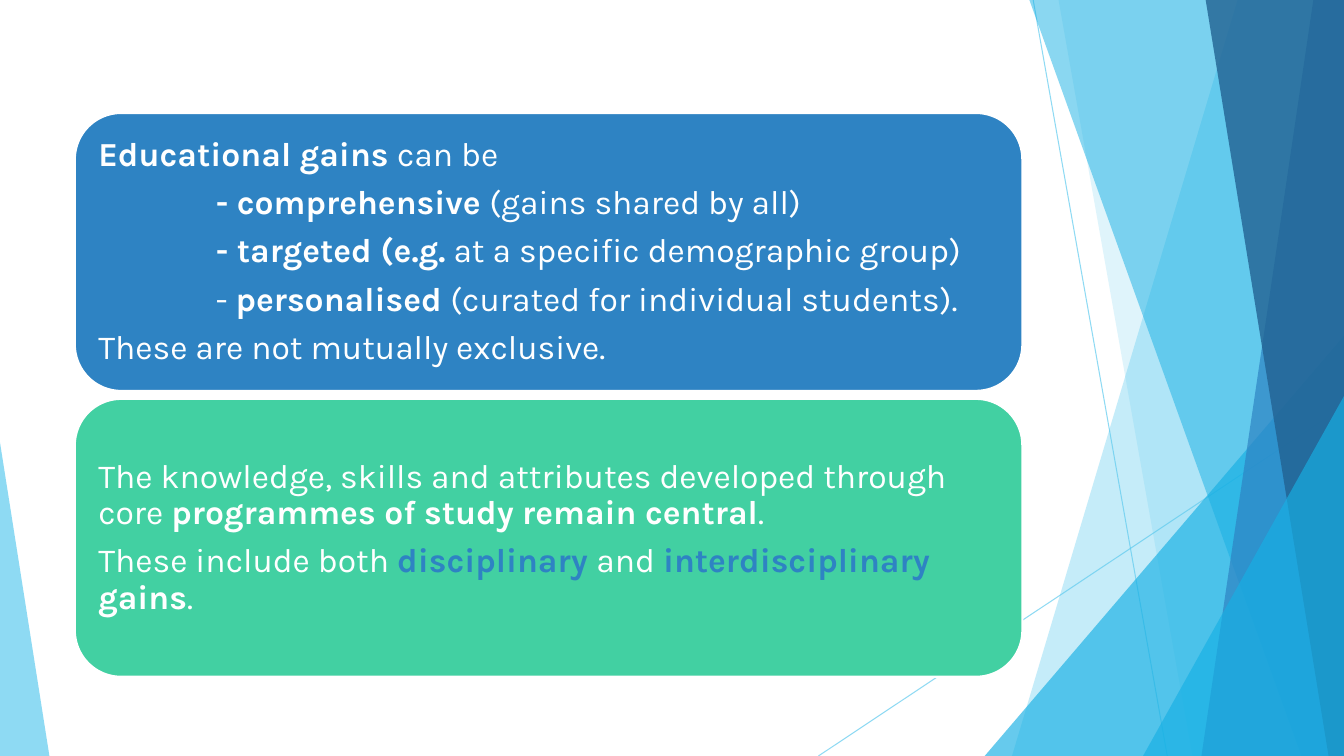
from dataclasses import dataclass

from lxml import etree
from pptx import Presentation
from pptx import util as u
from pptx.dml.color import RGBColor
from pptx.enum import shapes, text
from pptx.oxml import ns
from pptx.slide import Slide

WIDTH, HEIGHT = 960, 540
BAND_TOP = -0.6
CARD_LEFT, CARD_WIDTH, CARD_HEIGHT = 53.5, 676.8, 198.5
CARD_TOP, CARD_STEP = 80.7, 204.2
LIST_INDENT = 84

COLORS = {
    "sky": "5FCBEF",
    "cyan": "17B0E4",
    "blue": "2E83C3",
    "navy": "226292",
    "green": "42D0A2",
    "white": "FFFFFF",
}
FRAME_FORMAT = {
    "word_wrap": True,
    "vertical_anchor": text.MSO_ANCHOR.MIDDLE,
    "margin_left": u.Pt(7.2),
    "margin_top": u.Pt(7.2),
    "margin_right": u.Pt(7.2),
    "margin_bottom": u.Pt(7.2),
}
PARAGRAPH_FORMAT = {
    "alignment": text.PP_ALIGN.LEFT,
    "line_spacing": 0.9,
    "space_after": u.Pt(8.5),
}
FONT_FORMAT = {"name": "Karla", "size": u.Pt(24)}


@dataclass(frozen=True)
class Ray:
    start: tuple[float, float]
    end: tuple[float, float]


@dataclass(frozen=True)
class Band:
    """Area between a slanting left edge and the right side of the slide."""
    top_x: float
    bottom_x: float
    color: str
    opacity: int


@dataclass(frozen=True)
class Corner:
    """Right triangle standing on the bottom of the slide."""
    left: float
    width: float
    height: float
    apex: float
    color: str
    opacity: int


@dataclass(frozen=True)
class Words:
    text: str
    bold: bool = False
    color: str = "white"


@dataclass(frozen=True)
class Line:
    words: tuple[Words, ...]
    indent: float = 0


@dataclass(frozen=True)
class Card:
    color: str
    lines: tuple[Line, ...]


RAYS = (
    Ray((738, 0), (833.8, HEIGHT)),
    Ray((WIDTH, 290.2), (584.6, HEIGHT)),
)
FACETS = (
    Band(884.2, 722.9, "sky", 36),
    Band(756, 851.8, "sky", 20),
    Corner(703.4, 256.6, 300.2, 1, "cyan", 66),
    Band(735.1, 929.5, "cyan", 50),
    Band(938.2, 858.2, "blue", 70),
    Band(861.1, 949, "navy", 80),
    Corner(816.5, 143.5, 257, 1, "cyan", 66),
    Corner(0, 35.3, 223.9, 0, "sky", 70),
)
CARDS = (
    Card("blue", (
        Line((Words("Educational gains ", True), Words("can be"))),
        Line((Words("- comprehensive ", True), Words("(gains shared by all)")), LIST_INDENT),
        Line((Words("- targeted (e.g.", True),
              Words(" at a specific demographic group)")), LIST_INDENT),
        Line((Words("- "), Words("personalised ", True),
              Words("(curated for individual students).")), LIST_INDENT),
        Line((Words("These are not mutually exclusive."),)),
    )),
    Card("green", (
        Line((Words("The knowledge, skills and attributes developed through core "),
              Words("programmes of study remain central", True), Words("."))),
        Line((Words("These include both "), Words("disciplinary ", True, "blue"),
              Words("and "), Words("interdisciplinary", True, "blue"),
              Words(" gains", True), Words("."))),
    )),
)


def rgb(name: str) -> RGBColor:
    return RGBColor.from_string(COLORS[name])


def apply_format(target: object, values: dict) -> None:
    for name, value in values.items():
        setattr(target, name, value)


def set_opacity(shape, percent: int) -> None:
    for color in shape._element.spPr.iter(ns.qn("a:srgbClr")):
        etree.SubElement(color, ns.qn("a:alpha"), val=str(percent * 1000))


def draw_ray(slide: Slide, ray: Ray) -> None:
    points = [u.Pt(value) for value in ray.start + ray.end]
    connector = slide.shapes.add_connector(shapes.MSO_CONNECTOR.STRAIGHT, *points)
    connector.line.width = u.Pt(0.75)
    connector.line.color.rgb = rgb("sky")
    set_opacity(connector, 70)
    etree.SubElement(connector._element.spPr, ns.qn("a:effectLst"))


def draw_facet(slide: Slide, facet: Band | Corner) -> None:
    if isinstance(facet, Band):
        top, bottom = u.Pt(BAND_TOP), u.Pt(HEIGHT)
        builder = slide.shapes.build_freeform(u.Pt(facet.top_x), top)
        builder.add_line_segments([
            (u.Pt(WIDTH), top), (u.Pt(WIDTH), bottom), (u.Pt(facet.bottom_x), bottom)])
        shape = builder.convert_to_shape()
    else:
        shape = slide.shapes.add_shape(
            shapes.MSO_SHAPE.ISOSCELES_TRIANGLE, u.Pt(facet.left),
            u.Pt(HEIGHT - facet.height), u.Pt(facet.width), u.Pt(facet.height))
        shape.adjustments[0] = facet.apex
    shape.shadow.inherit = False
    shape.fill.solid()
    shape.fill.fore_color.rgb = rgb(facet.color)
    shape.line.fill.background()
    set_opacity(shape, facet.opacity)


def write_line(paragraph, line: Line) -> None:
    apply_format(paragraph, PARAGRAPH_FORMAT)
    if line.indent:
        paragraph._p.get_or_add_pPr().set("marL", str(u.Pt(line.indent)))
    for words in line.words:
        run = paragraph.add_run()
        run.text = words.text
        apply_format(run.font, FONT_FORMAT | {"bold": words.bold})
        run.font.color.rgb = rgb(words.color)


def draw_card(slide: Slide, card: Card, top: float) -> None:
    shape = slide.shapes.add_shape(
        shapes.MSO_SHAPE.ROUNDED_RECTANGLE, u.Pt(CARD_LEFT), u.Pt(top),
        u.Pt(CARD_WIDTH), u.Pt(CARD_HEIGHT))
    shape.shadow.inherit = False
    shape.fill.solid()
    shape.fill.fore_color.rgb = rgb(card.color)
    shape.line.color.rgb = rgb("white")
    shape.line.width = u.Pt(1.5)
    frame = shape.text_frame
    apply_format(frame, FRAME_FORMAT)
    for index, line in enumerate(card.lines):
        write_line(frame.add_paragraph() if index else frame.paragraphs[0], line)


def main() -> None:
    presentation = Presentation()
    presentation.slide_width, presentation.slide_height = u.Pt(WIDTH), u.Pt(HEIGHT)
    slide = presentation.slides.add_slide(presentation.slide_layouts[6])
    for ray in RAYS:
        draw_ray(slide, ray)
    for facet in FACETS:
        draw_facet(slide, facet)
    for index, card in enumerate(CARDS):
        draw_card(slide, card, CARD_TOP + index * CARD_STEP)
    presentation.save("out.pptx")


if __name__ == "__main__":
    main()
